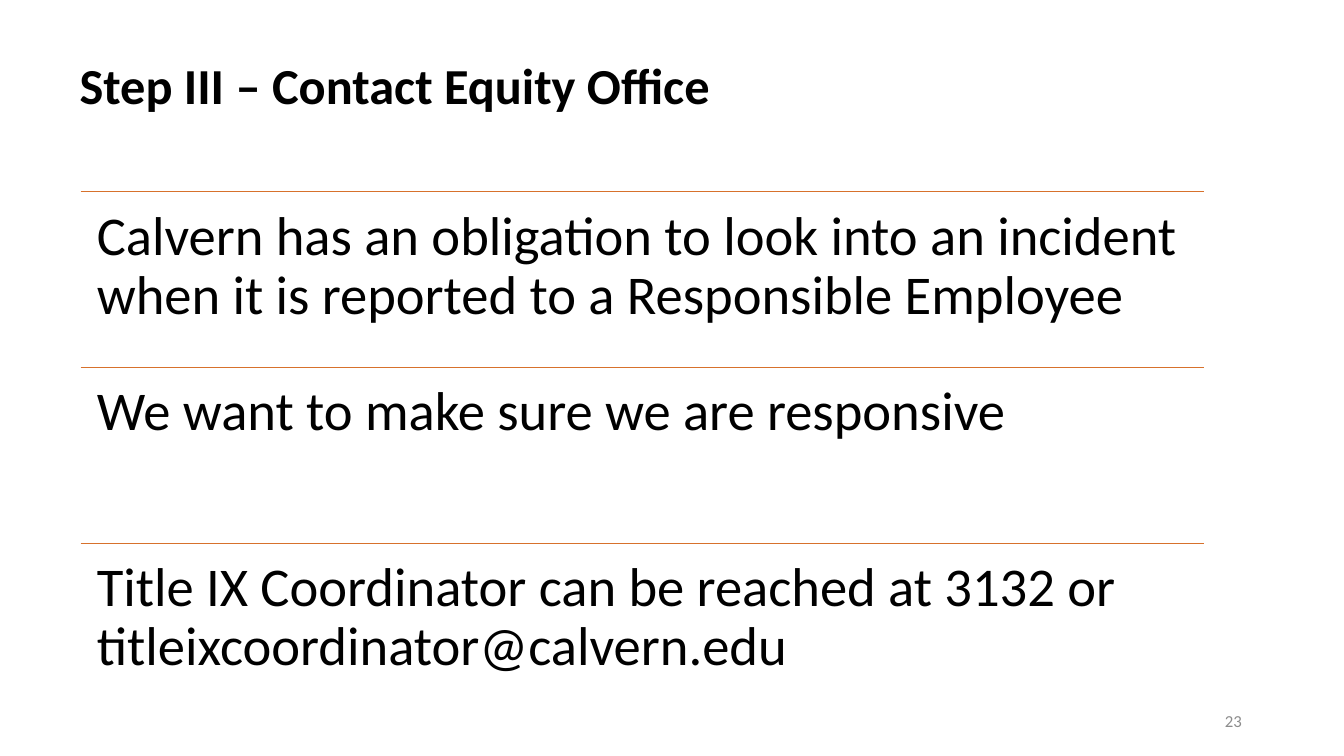
"""Build the slide on contacting the equity office."""
from lxml.etree import SubElement
from pptx import Presentation
from pptx.dml.color import RGBColor
from pptx.enum.shapes import MSO_CONNECTOR
from pptx.enum.text import MSO_ANCHOR, PP_ALIGN
from pptx.oxml.ns import qn
from pptx.util import Cm, Pt

TITLE = "Step III – Contact Equity Office"
STATEMENTS = [
    "Calvern has an obligation to look into an incident "
    "when it is reported to a Responsible Employee",
    "We want to make sure we are responsive",
    "Title IX Coordinator can be reached at 3132 or titleixcoordinator@calvern.edu",
]
PAGE_NUMBER = "23"

FONT = "Calibri"
BLACK = RGBColor(0x00, 0x00, 0x00)
GRAY = RGBColor(0x8C, 0x8C, 0x8C)
ORANGE = RGBColor(0xD7, 0x71, 0x2C)

ROW_LEFT, ROW_TOP = 2.03, 4.83
ROW_WIDTH, ROW_HEIGHT = 28.32, 4.43
ROW_INSET = Cm(0.41)


def write_text(frame, text, size, color, bold=False, align=PP_ALIGN.LEFT, spacing=1.0):
    """Write one formatted run into a text frame and wrap it."""
    frame.word_wrap = True
    paragraph = frame.paragraphs[0]
    paragraph.alignment = align
    paragraph.line_spacing = spacing
    run = paragraph.add_run()
    run.text = text
    run.font.name = FONT
    run.font.size = Pt(size)
    run.font.bold = bold
    run.font.color.rgb = color


def add_statement(slide, top, text):
    """Add a rule with a statement beneath it."""
    left, right = Cm(ROW_LEFT), Cm(ROW_LEFT + ROW_WIDTH)
    rule = slide.shapes.add_connector(MSO_CONNECTOR.STRAIGHT, left, Cm(top), right, Cm(top))
    rule.line.color.rgb = ORANGE
    rule.line.width = Pt(1)
    SubElement(rule._element.spPr, qn("a:effectLst"))

    box = slide.shapes.add_textbox(left, Cm(top), Cm(ROW_WIDTH), Cm(ROW_HEIGHT))
    frame = box.text_frame
    frame.margin_left = frame.margin_right = ROW_INSET
    frame.margin_top = frame.margin_bottom = ROW_INSET
    write_text(frame, text, 39, BLACK, spacing=0.9)


def main():
    """Create the presentation and save it."""
    presentation = Presentation()
    presentation.slide_width, presentation.slide_height = Cm(33.87), Cm(19.05)
    slide = presentation.slides.add_slide(presentation.slide_layouts[5])

    title = slide.shapes.title
    title.left, title.top, title.width, title.height = Cm(1.75), Cm(0.64), Cm(23.22), Cm(3.18)
    title.text_frame.vertical_anchor = MSO_ANCHOR.MIDDLE
    write_text(title.text_frame, TITLE, 36, BLACK, bold=True, spacing=0.9)

    for index, statement in enumerate(STATEMENTS):
        add_statement(slide, ROW_TOP + index * ROW_HEIGHT, statement)

    number_box = slide.shapes.add_textbox(Cm(23.93), Cm(17.65), Cm(7.62), Cm(1.02))
    number_box.text_frame.vertical_anchor = MSO_ANCHOR.MIDDLE
    write_text(number_box.text_frame, PAGE_NUMBER, 12, GRAY, align=PP_ALIGN.RIGHT)

    presentation.save("out.pptx")


if __name__ == "__main__":
    main()
